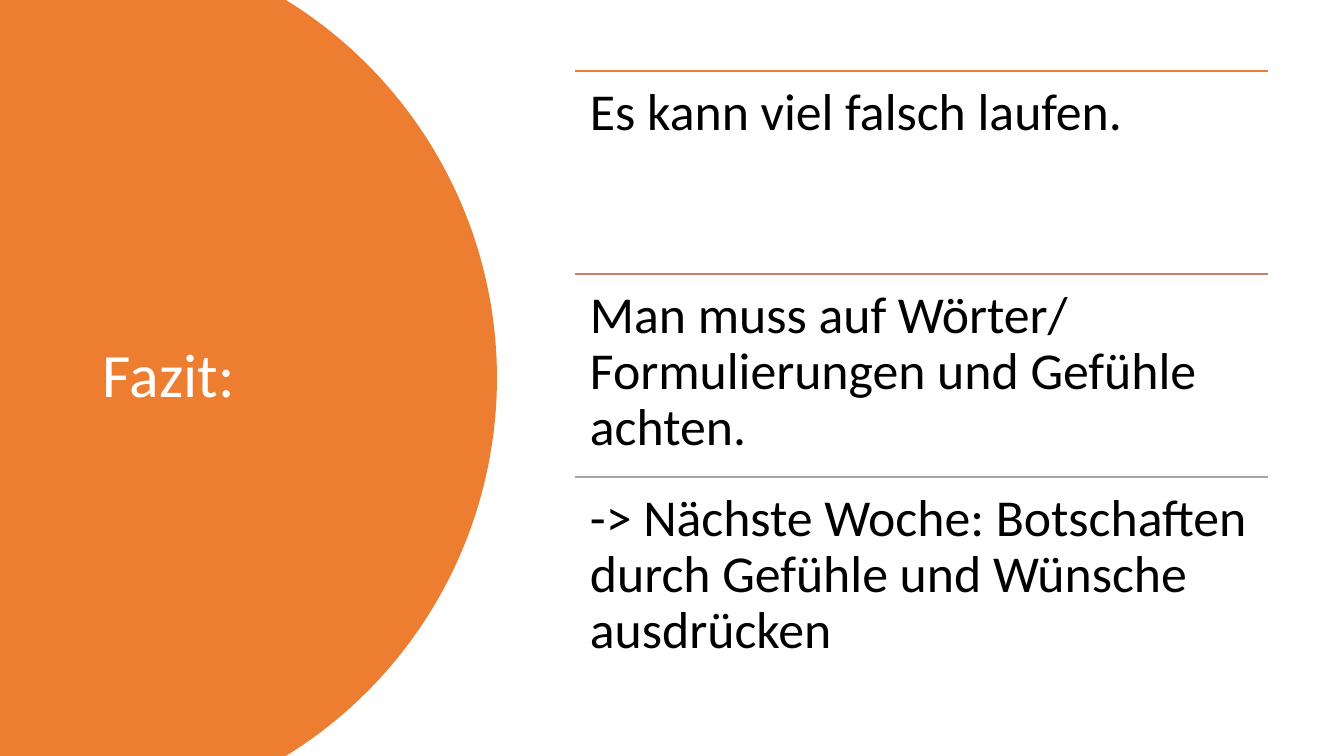
from math import asin, cos, sin

from lxml import etree
from pptx import Presentation
from pptx.dml.color import RGBColor
from pptx.enum.shapes import MSO_CONNECTOR
from pptx.enum.text import MSO_ANCHOR
from pptx.oxml.ns import qn
from pptx.util import Emu, Pt

STRAIGHT = MSO_CONNECTOR.STRAIGHT
TOP = MSO_ANCHOR.TOP
MIDDLE = MSO_ANCHOR.MIDDLE

WIDTH, HEIGHT = 1344, 756
EMU_PER_PX = 12192000 / WIDTH
COLORS = {
    "orange": "ED7D31",
    "rust": "C48170",
    "gray": "A5A5A5",
    "white": "FFFFFF",
    "black": "000000",
}
CONCLUSIONS = [
    ("orange", "Es kann viel falsch laufen."),
    ("rust", "Man muss auf Wörter/ Formulierungen und Gefühle achten."),
    ("gray", "-> Nächste Woche: Botschaften durch Gefühle und Wünsche ausdrücken"),
]


def px(length):
    return Emu(round(length * EMU_PER_PX))


def color(name):
    return RGBColor.from_string(COLORS[name])


class SlideBuilder:
    font_name = "Calibri"
    line_spacing = 0.9

    def __init__(self, page):
        self.page = page

    def round_panel(self, center_x, radius, fill, steps=90):
        middle = HEIGHT / 2
        limit = asin(middle / radius)
        angles = [limit * (2 * step / steps - 1) for step in range(steps + 1)]
        arc = [
            (px(center_x + radius * cos(angle)), px(middle + radius * sin(angle)))
            for angle in angles
        ]
        outline = self.page.shapes.build_freeform(0, 0)
        outline.add_line_segments(arc + [(0, px(HEIGHT))], close=True)
        panel = outline.convert_to_shape()
        panel.shadow.inherit = False
        panel.fill.solid()
        panel.fill.fore_color.rgb = color(fill)
        panel.line.fill.background()

    def rule(self, left, right, top, stroke):
        line = self.page.shapes.add_connector(
            STRAIGHT, px(left), px(top), px(right), px(top)
        )
        line.line.color.rgb = color(stroke)
        line.line.width = Pt(1)
        etree.SubElement(line._element.spPr, qn("a:effectLst"))

    def text(self, left, top, width, height, words, size, ink, anchor, inset):
        box = self.page.shapes.add_textbox(px(left), px(top), px(width), px(height))
        frame = box.text_frame
        frame.word_wrap = True
        frame.vertical_anchor = anchor
        frame.margin_left = frame.margin_right = px(inset[0])
        frame.margin_top = frame.margin_bottom = px(inset[1])
        para = frame.paragraphs[0]
        para.text = words
        para.line_spacing = self.line_spacing
        para.font.name = self.font_name
        para.font.size = Pt(size)
        para.font.color.rgb = color(ink)


def main():
    deck = Presentation()
    deck.slide_width, deck.slide_height = px(WIDTH), px(HEIGHT)
    builder = SlideBuilder(deck.slides.add_slide(deck.slide_layouts[6]))

    builder.round_panel(53, 444, "orange")
    builder.text(93, 71, 326, 614, "Fazit:", 44, "white", MIDDLE, (10, 5))

    left, right, first_top, row_height = 575, 1268, 71, 203
    for row, (stroke, words) in enumerate(CONCLUSIONS):
        top = first_top + row * row_height
        builder.rule(left, right, top, stroke)
        builder.text(
            left, top, right - left, row_height, words, 37, "black", TOP, (15, 15)
        )

    deck.save("out.pptx")


if __name__ == "__main__":
    main()
